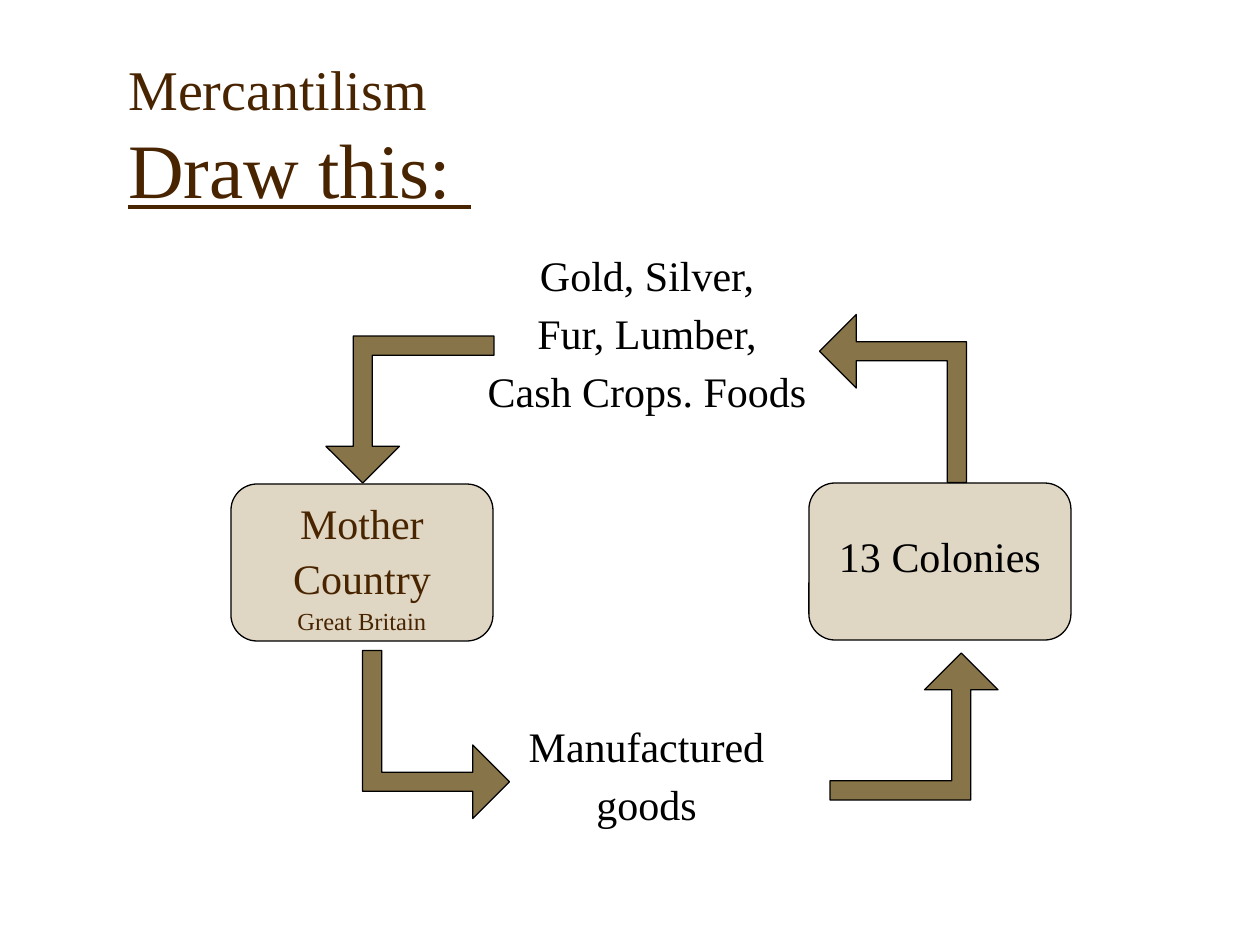
from dataclasses import dataclass

from pptx import Presentation
from pptx import util as u
from pptx.dml.color import RGBColor
from pptx.enum import shapes, text

PX = 914400 / 126


@dataclass(frozen=True)
class Theme:
    font: str = "Times New Roman"
    brown: str = "482400"
    black: str = "000000"
    sand: str = "DFD6C3"
    bronze: str = "887449"
    heading: int = 44
    subheading: int = 32
    body: int = 24
    small: int = 14


THEME = Theme()


def px(*lengths):
    return [u.Emu(round(length * PX)) for length in lengths]


def write(shape, lines, color, align, anchor, gap=0.0, top=6, bottom=6):
    """Write (wording, size) lines; gap is the space before as a share of size."""
    frame = shape.text_frame
    frame.word_wrap = False
    frame.vertical_anchor = anchor
    frame.margin_top, frame.margin_bottom = px(top, bottom)
    for index, (wording, size) in enumerate(lines):
        para = frame.paragraphs[0] if index == 0 else frame.add_paragraph()
        para.text = wording
        para.alignment = align
        para.space_before = u.Pt(round(gap * size, 1) if index else 0)
        para.font.name = THEME.font
        para.font.size = u.Pt(size)
        para.font.color.rgb = RGBColor.from_string(color)


def draw_shape(page, kind, box, fill):
    shape = page.shapes.add_shape(kind, *px(*box))
    shape.shadow.inherit = False
    shape.fill.solid()
    shape.fill.fore_color.rgb = RGBColor.from_string(fill)
    shape.line.color.rgb = RGBColor.from_string(THEME.black)
    shape.line.width = u.Pt(0.75)
    return shape


def add_title(page, box):
    title = page.shapes.add_textbox(*px(*box))
    lines = [("Mercantilism", THEME.subheading), ("Draw this: ", THEME.heading)]
    write(title, lines, THEME.brown, text.PP_ALIGN.LEFT, text.MSO_ANCHOR.BOTTOM)
    title.text_frame.paragraphs[1].font.underline = True


def add_place(page, box, lines, color, top, bottom):
    place = draw_shape(page, shapes.MSO_SHAPE.ROUNDED_RECTANGLE, box, THEME.sand)
    write(place, lines, color, text.PP_ALIGN.CENTER,
          text.MSO_ANCHOR.MIDDLE, gap=0.12, top=top, bottom=bottom)


def add_goods(page, box, lines):
    goods = page.shapes.add_textbox(*px(*box))
    write(goods, [(line, THEME.body) for line in lines], THEME.black,
          text.PP_ALIGN.CENTER, text.MSO_ANCHOR.TOP, gap=0.18)


def add_bent_arrow(page, left, top, rotation):
    arrow = draw_shape(page, shapes.MSO_SHAPE.BENT_UP_ARROW,
                       (left, top, 168, 147), THEME.bronze)
    arrow.rotation = rotation
    for index, share in enumerate((0.13, 0.25, 0.25)):
        arrow.adjustments[index] = share


def add_trade_cycle(page, box):
    """Two places joined by a loop of goods and bent arrows."""
    left, top = box
    add_place(page, (left, top + 241, 262, 157),
              [("Mother", THEME.body), ("Country", THEME.body),
               ("Great Britain", THEME.small)], THEME.brown, 8, 0)
    add_place(page, (left + 578, top + 240, 262, 157),
              [("13 Colonies", THEME.body)], THEME.black, 6, 17)
    add_goods(page, (left + 242, top + 1, 348, 175),
              ["Gold, Silver,", "Fur, Lumber,", "Cash Crops. Foods"])
    add_goods(page, (left + 284, top + 472, 263, 115), ["Manufactured", "goods"])
    for x, y, rotation in ((578, 82, 270), (95, 93, 180),
                           (121, 418, 90), (599, 410, 0)):
        add_bent_arrow(page, left + x, top + y, rotation)


def main():
    deck = Presentation()
    deck.slide_width, deck.slide_height = px(1260, 945)
    page = deck.slides.add_slide(deck.slide_layouts[6])
    add_title(page, (116, 41, 1071, 179))
    add_trade_cycle(page, (231, 243))
    deck.save("out.pptx")


if __name__ == "__main__":
    main()
